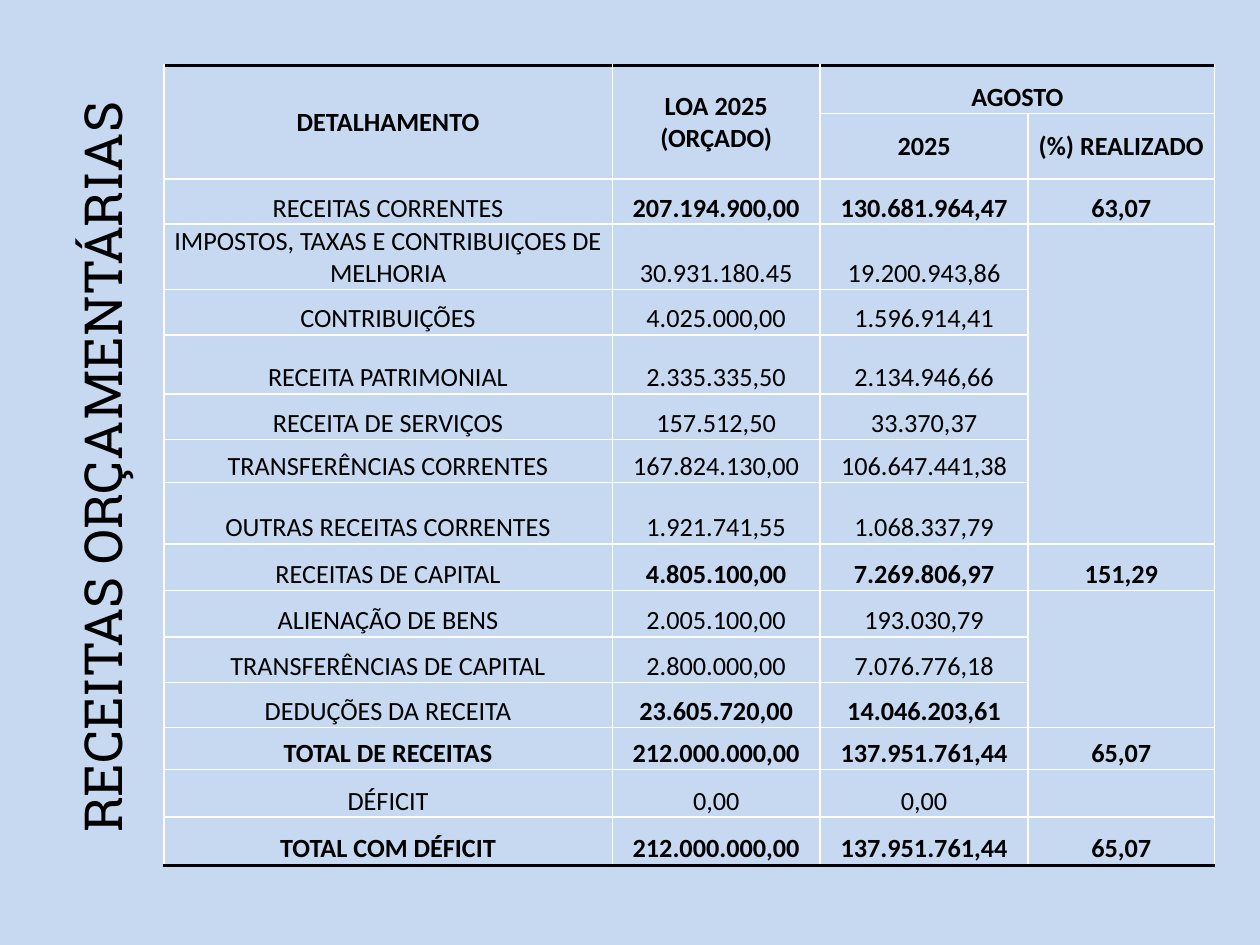
from lxml import etree
from pptx import Presentation
from pptx import util as u
from pptx.dml.color import RGBColor
from pptx.enum import text
from pptx.oxml import ns

BACKGROUND, INK = "C6D9F1", "000000"


def write(frame, wording, size=15, font="Calibri", bold=False):
    para = frame.paragraphs[0]
    para.alignment = text.PP_ALIGN.CENTER
    span = para.add_run()
    span.text = wording
    span.font.size = u.Pt(size)
    span.font.name = font
    span.font.bold = bold
    span.font.color.rgb = RGBColor.from_string(INK)


def add_border(cell, side):
    properties = cell._tc.get_or_add_tcPr()
    line = etree.Element(ns.qn(f"a:{side}"), w=str(u.Pt(2)))
    fill = etree.SubElement(line, ns.qn("a:solidFill"))
    etree.SubElement(fill, ns.qn("a:srgbClr"), val=INK)
    properties.insert(0, line)  # borders come before the cell fill


deck = Presentation()
deck.slide_width, deck.slide_height = u.Pt(720), u.Pt(540)
page = deck.slides.add_slide(deck.slide_layouts[6])
page.background.fill.solid()
page.background.fill.fore_color.rgb = RGBColor.from_string(BACKGROUND)

# Vertical title
box = page.shapes.add_textbox(u.Pt(36.7), u.Pt(37.4), u.Pt(72.7), u.Pt(459.4))
box.text_frame.word_wrap = True
box.text_frame._txBody.bodyPr.set("vert", "vert270")
write(box.text_frame, "RECEITAS ORÇAMENTÁRIAS", size=30, font="Roboto Slab")

# Table contents: wording per row, then whether label and values are bold
rows = [
    (("DETALHAMENTO", "LOA 2025 (ORÇADO)", "AGOSTO", ""), True, True),
    (("", "", "2025", "(%) REALIZADO"), True, True),
    (("RECEITAS CORRENTES", "207.194.900,00", "130.681.964,47", "63,07"), False, True),
    (("IMPOSTOS, TAXAS E CONTRIBUIÇOES DE MELHORIA", "30.931.180.45",
      "19.200.943,86", ""), False, False),
    (("CONTRIBUIÇÕES", "4.025.000,00", "1.596.914,41", ""), False, False),
    (("RECEITA PATRIMONIAL", "2.335.335,50", "2.134.946,66", ""), False, False),
    (("RECEITA DE SERVIÇOS", "157.512,50", "33.370,37", ""), False, False),
    (("TRANSFERÊNCIAS CORRENTES", "167.824.130,00", "106.647.441,38", ""), False, False),
    (("OUTRAS RECEITAS CORRENTES", "1.921.741,55", "1.068.337,79", ""), False, False),
    (("RECEITAS DE CAPITAL", "4.805.100,00", "7.269.806,97", "151,29"), False, True),
    (("ALIENAÇÃO DE BENS", "2.005.100,00", "193.030,79", ""), False, False),
    (("TRANSFERÊNCIAS DE CAPITAL", "2.800.000,00", "7.076.776,18", ""), False, False),
    (("DEDUÇÕES DA RECEITA", "23.605.720,00", "14.046.203,61", ""), False, True),
    (("TOTAL DE RECEITAS", "212.000.000,00", "137.951.761,44", "65,07"), True, True),
    (("DÉFICIT", "0,00", "0,00", ""), False, False),
    (("TOTAL COM DÉFICIT", "212.000.000,00", "137.951.761,44", "65,07"), True, True),
]
widths = [256.3, 118.8, 118.8, 106.6]
heights = [27.4, 36.7, 25.9, 28.8, 25.9, 33.8, 25.9, 24.5,
           35.3, 26.6, 26.6, 25.9, 25.9, 23.8, 27.4, 27.4]

# Table grid
table = page.shapes.add_table(len(rows), len(widths), u.Pt(93.6), u.Pt(37.4),
                              u.Pt(sum(widths)), u.Pt(sum(heights))).table
table.first_row = table.horz_banding = False
for column, width in zip(table.columns, widths):
    column.width = u.Pt(width)
for row, height in zip(table.rows, heights):
    row.height = u.Pt(height)

# Cells, with rules above the first row and below the last
for r, (wordings, label_bold, value_bold) in enumerate(rows):
    for c, wording in enumerate(wordings):
        cell = table.cell(r, c)
        cell.margin_left = cell.margin_right = cell.margin_top = u.Pt(0.7)
        cell.margin_bottom = u.Pt(0)
        in_header = r < 2 and wording != "AGOSTO"
        cell.vertical_anchor = (text.MSO_ANCHOR.MIDDLE if in_header
                                else text.MSO_ANCHOR.BOTTOM)
        cell.fill.solid()
        cell.fill.fore_color.rgb = RGBColor.from_string(BACKGROUND)
        write(cell.text_frame, wording, bold=value_bold if c else label_bold)
        if r == 0:
            add_border(cell, "lnT")
        elif r == len(rows) - 1:
            add_border(cell, "lnB")

# Merged areas: first row and column, last row and column
for top, left, bottom, right in [(0, 0, 1, 0), (0, 1, 1, 1), (0, 2, 0, 3),
                                 (3, 3, 8, 3), (10, 3, 12, 3)]:
    table.cell(top, left).merge(table.cell(bottom, right))

deck.save("out.pptx")
